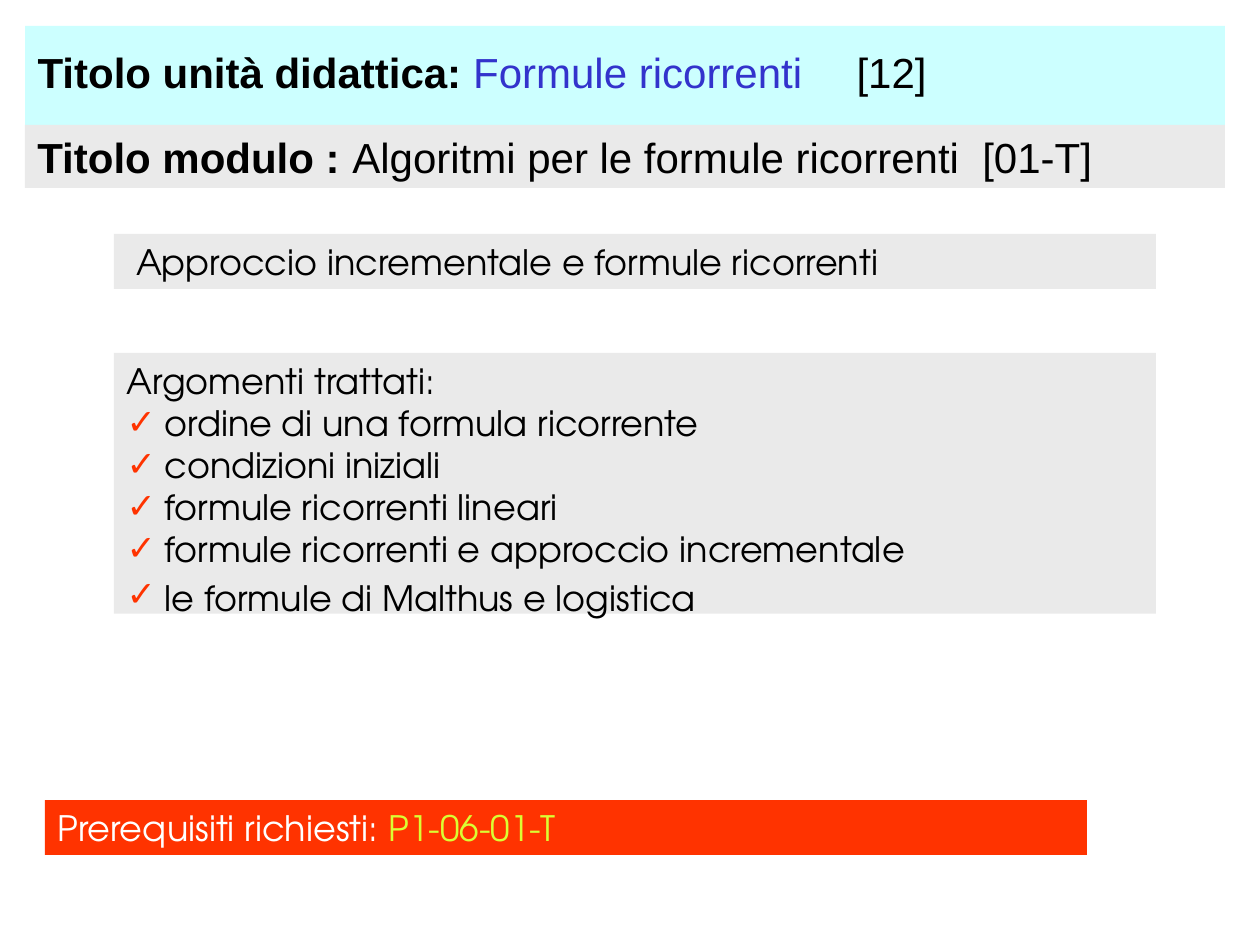
from dataclasses import dataclass

from lxml import etree
from pptx import Presentation
from pptx.dml.color import RGBColor
from pptx.enum.shapes import MSO_SHAPE
from pptx.enum.text import MSO_ANCHOR, MSO_AUTO_SIZE, PP_ALIGN
from pptx.oxml.ns import qn
from pptx.util import Emu, Pt

RECT = MSO_SHAPE.RECTANGLE
TOP = MSO_ANCHOR.TOP
GROW = MSO_AUTO_SIZE.SHAPE_TO_FIT_TEXT
LEFT = PP_ALIGN.LEFT
SCALE = 914400 / 126
HEAD = "Arial"
BODY = "TeX Gyre Adventor"
HEX = {
    "black": "000000",
    "white": "FFFFFF",
    "blue": "3333CC",
    "cyan": "CCFFFF",
    "grey": "EAEAEA",
    "red": "FF3300",
    "lime": "DBFD33",
}


@dataclass(frozen=True)
class Run:
    text: str
    color: str = "black"
    bold: bool = False
    size: int | None = None


@dataclass(frozen=True)
class Line:
    runs: tuple[Run, ...]
    tabs: tuple[int, ...] = ()
    mark: str = ""


@dataclass(frozen=True)
class Box:
    left: int
    top: int
    width: int
    height: int
    fill: str
    font: str
    size: int
    lines: tuple[Line, ...]


def px(value: int) -> Emu:
    return Emu(round(value * SCALE))


def rgb(name: str) -> RGBColor:
    return RGBColor.from_string(HEX[name])


def add_text(para, text: str, *, font: str, size: int, color: str, bold: bool) -> None:
    run = para.add_run()
    run.text = text
    run.font.name = font
    run.font.size = Pt(size)
    run.font.bold = bold
    run.font.color.rgb = rgb(color)


def set_line(para, line: Line) -> None:
    para.alignment = LEFT
    para.space_before = para.space_after = Pt(0)
    props = para._p.get_or_add_pPr()
    dent = px(38) if line.mark else 0
    props.set("marL", str(dent))
    props.set("indent", str(-dent))
    if line.mark:
        color = etree.SubElement(props, qn("a:buClr"))
        etree.SubElement(color, qn("a:srgbClr"), val=HEX["red"])
        etree.SubElement(props, qn("a:buChar"), char=line.mark)
    else:
        etree.SubElement(props, qn("a:buNone"))
    if line.tabs:
        stops = etree.SubElement(props, qn("a:tabLst"))
        for stop in line.tabs:
            etree.SubElement(stops, qn("a:tab"), pos=str(px(stop)), algn="l")


def draw_box(shape, box: Box) -> None:
    shape.left, shape.top = px(box.left), px(box.top)
    shape.width, shape.height = px(box.width), px(box.height)
    shape.fill.solid()
    shape.fill.fore_color.rgb = rgb(box.fill)
    shape.line.fill.background()
    frame = shape.text_frame
    frame.word_wrap = True
    frame.auto_size = GROW
    frame.vertical_anchor = TOP
    for index, line in enumerate(box.lines):
        para = frame.add_paragraph() if index else frame.paragraphs[0]
        set_line(para, line)
        for run in line.runs:
            add_text(para, run.text, font=box.font, size=run.size or box.size,
                     color=run.color, bold=run.bold)


def add_box(slide, box: Box) -> None:
    shape = slide.shapes.add_shape(RECT, 0, 0, px(box.width), px(box.height))
    shape.shadow.inherit = False
    draw_box(shape, box)


TOPICS = (
    "ordine di una formula ricorrente",
    "condizioni iniziali",
    "formule ricorrenti lineari",
    "formule ricorrenti e approccio incrementale",
)
UNIT = Box(25, 26, 1200, 80, "cyan", HEAD, 24, (
    Line((
        Run("Titolo unità didattica: ", bold=True),
        Run("Formule ricorrenti\t", "blue"),
        Run("[12]"),
        Run(" ", bold=True, size=32),
    ), tabs=(1081,)),
))
MODULE = Box(25, 125, 1200, 63, "grey", HEAD, 24, (
    Line((
        Run("Titolo modulo :\t", bold=True),
        Run("Algoritmi per le formule ricorrenti\t[01-T]"),
    ), tabs=(326, 1050)),
))
THEME = Box(114, 234, 1042, 55, "grey", BODY, 20, (
    Line((Run(" Approccio incrementale e formule ricorrenti"),)),
))
LIST = Box(114, 353, 1042, 273, "grey", BODY, 20, (
    Line((Run("Argomenti trattati:"),)),
    *(Line((Run(topic),), mark="✓") for topic in TOPICS),
    Line((Run("le formule di Malthus e logistica"), Run(" ", size=24)), mark="✓"),
))
NEEDS = Box(45, 800, 1042, 55, "red", BODY, 20, (
    Line((Run("Prerequisiti richiesti: ", "white"), Run("P1-06-01-T", "lime"))),
))


def main() -> None:
    deck = Presentation()
    deck.slide_width, deck.slide_height = px(1260), px(945)
    slide = deck.slides.add_slide(deck.slide_layouts[1])
    draw_box(slide.shapes.title, UNIT)
    draw_box(slide.placeholders[1], LIST)
    for box in (MODULE, THEME, NEEDS):
        add_box(slide, box)
    deck.save("out.pptx")


if __name__ == "__main__":
    main()
